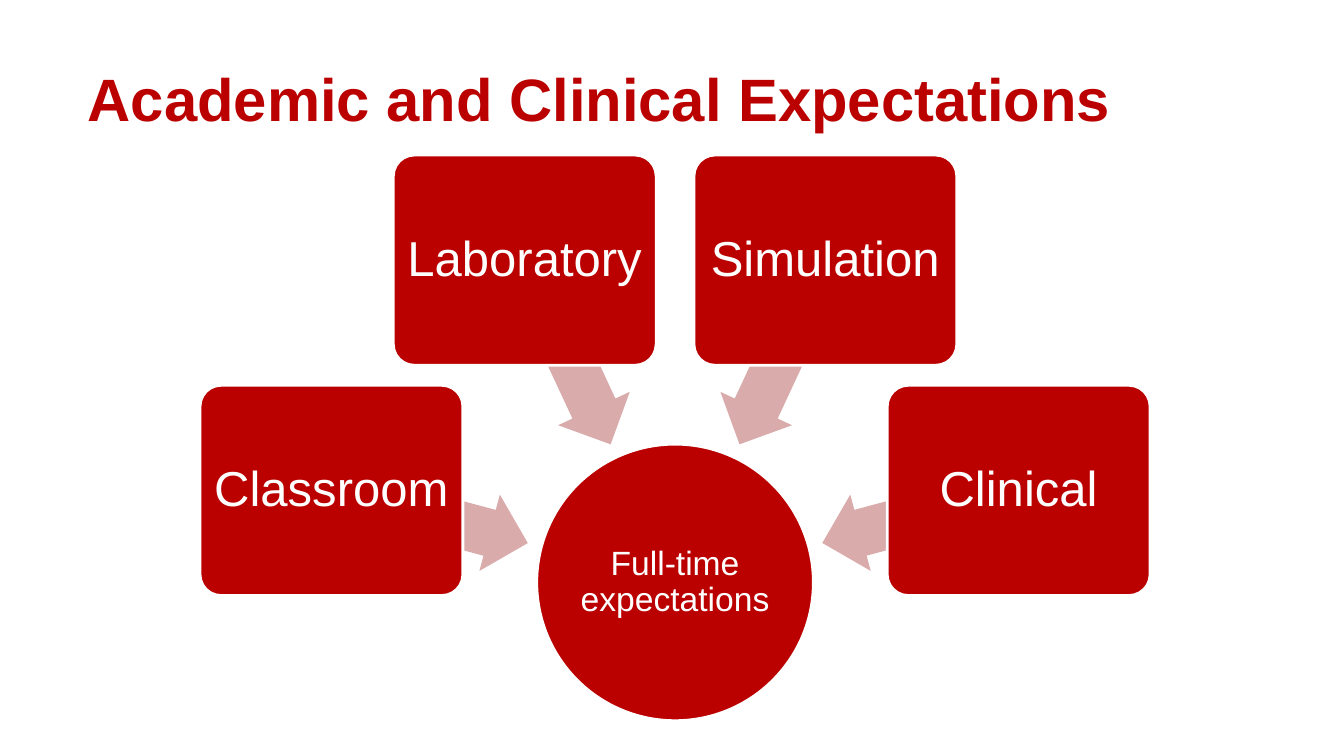
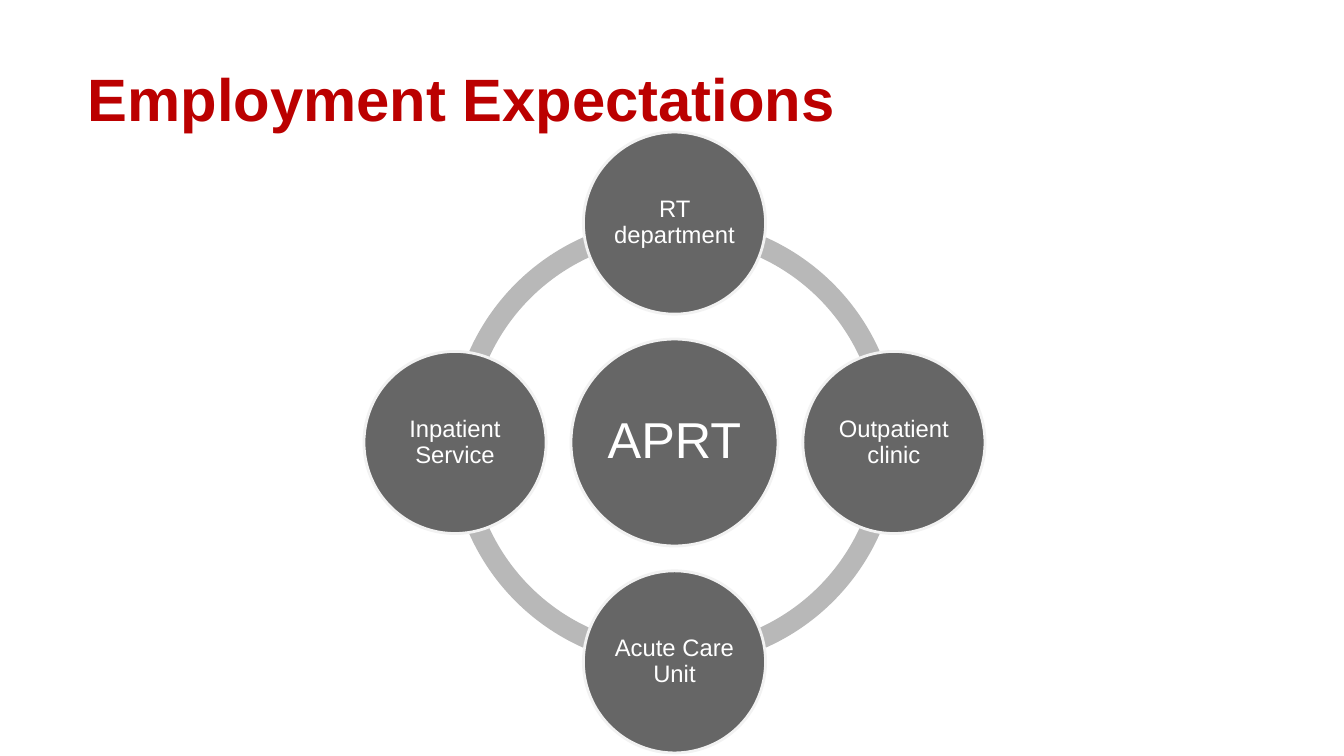
import math

import pptx
import pptx.dml.color
import pptx.enum.shapes
import pptx.enum.text
import pptx.util

SLIDE_WIDTH, SLIDE_HEIGHT = 13.33, 7.5
COLUMN, ROW = SLIDE_WIDTH / 100, SLIDE_HEIGHT / 100
RED, PINK = "BB0000", "DAABAB"
DARK_GRAY, MID_GRAY, PALE_GRAY = "666666", "B8B8B8", "F2F2F2"
WHITE = "FFFFFF"
FONT = "Arial"
SHAPE = pptx.enum.shapes.MSO_SHAPE
ALIGN = pptx.enum.text.PP_ALIGN


def color_of(hex_text):
    """Turn a hex string into a colour."""
    return pptx.dml.color.RGBColor.from_string(hex_text)


def grid_box(column, row, columns, rows):
    """Return left, top, width and height in inches for a place on the 100 by 100 grid."""
    return column * COLUMN, row * ROW, columns * COLUMN, rows * ROW


def orbit_point(center, radius, angle):
    """Return the point at a clockwise angle in degrees around a center."""
    turn = math.radians(angle)
    return center[0] + radius * math.cos(turn), center[1] + radius * math.sin(turn)


def write_text(shape, text, size, color=WHITE, bold=False, align=ALIGN.CENTER,
               inset=(0.02, 0.02), spacing=0.9, wrap=True):
    """Write one formatted paragraph into a shape."""
    frame = shape.text_frame
    frame.auto_size = pptx.enum.text.MSO_AUTO_SIZE.NONE
    frame.word_wrap = wrap
    frame.vertical_anchor = pptx.enum.text.MSO_ANCHOR.MIDDLE
    frame.margin_left = frame.margin_right = pptx.util.Inches(inset[0])
    frame.margin_top = frame.margin_bottom = pptx.util.Inches(inset[1])
    para = frame.paragraphs[0]
    para.alignment = align
    para.line_spacing = spacing
    span = para.add_run()
    span.text = text
    span.font.name = FONT
    span.font.size = pptx.util.Pt(size)
    span.font.bold = bold
    span.font.color.rgb = color_of(color)


def add_figure(page, kind, center, width, height, fill, outline=None, adjust=(), turn=0):
    """Add a flat preset shape around a center."""
    left, top = center[0] - width / 2, center[1] - height / 2
    shape = page.shapes.add_shape(kind, *map(pptx.util.Inches, (left, top, width, height)))
    shape.shadow.inherit = False
    shape.rotation = turn
    shape.fill.solid()
    shape.fill.fore_color.rgb = color_of(fill)
    if outline:
        shape.line.color.rgb = color_of(outline)
        shape.line.width = pptx.util.Pt(2)
    else:
        shape.line.fill.background()
    for index, value in enumerate(adjust):
        shape.adjustments[index] = value
    return shape


def add_titled_page(deck, title):
    """Add a title-only slide with the shared title style."""
    page = deck.slides.add_slide(deck.slide_layouts[5])
    heading = page.shapes.title
    heading.left, heading.top, heading.width, heading.height = map(
        pptx.util.Inches, grid_box(5.78, 7.47, 88, 10.93))
    write_text(heading, title, 42.7, color=RED, bold=True, align=ALIGN.LEFT,
               inset=(0.1, 0.05), spacing=1)
    return page


def draw_converging(page, box, goal, sources):
    """Draw source boxes on an arc, each with an arrow to a goal circle at the bottom."""
    left, top, width, height = box
    hub = 0.49 * height
    center = left + width / 2, top + height - hub / 2
    circle = add_figure(page, SHAPE.OVAL, center, hub, hub, RED, WHITE)
    write_text(circle, goal, 24)
    for index, label in enumerate(sources):
        angle = 195 + 50 * index
        add_figure(page, SHAPE.LEFT_ARROW, orbit_point(center, 0.45 * height, angle),
                   0.36 * height, 0.14 * height, PINK, adjust=(0.6, 0.5), turn=angle)
        source = add_figure(page, SHAPE.ROUNDED_RECTANGLE,
                            orbit_point(center, 0.63 * height, angle),
                            0.95 * hub, 0.76 * hub, RED, WHITE, adjust=(0.1,))
        write_text(source, label, 35, inset=(0.05, 0.07))


def draw_radial_cycle(page, box, core, members):
    """Draw member circles on a ring of arcs around a core circle."""
    left, top, width, height = box
    center = left + width / 2, top + height / 2
    hub = height / 3
    ring, member_size = 2.17 * hub, 0.88 * hub
    step = 360 / len(members)
    angles = [(270 + step * index) % 360 for index in range(len(members))]
    for angle in angles:
        limits = [0.6 * degrees for degrees in (angle, (angle + step) % 360)]
        add_figure(page, SHAPE.BLOCK_ARC, center, ring, ring, MID_GRAY,
                   adjust=(*limits, 0.046))
    circle = add_figure(page, SHAPE.OVAL, center, hub, hub, DARK_GRAY, PALE_GRAY)
    write_text(circle, core, 36, inset=(0.05, 0.05))
    for angle, label in zip(angles, members):
        point = orbit_point(center, (height - member_size) / 2, angle)
        member = add_figure(page, SHAPE.OVAL, point, member_size, member_size,
                            DARK_GRAY, PALE_GRAY)
        write_text(member, label, 17)


def main():
    """Build the deck and save it."""
    deck = pptx.Presentation()
    deck.slide_width = pptx.util.Inches(SLIDE_WIDTH)
    deck.slide_height = pptx.util.Inches(SLIDE_HEIGHT)

    page = add_titled_page(deck, "Academic and Clinical Expectations")
    draw_converging(page, grid_box(14.93, 20.67, 70.6, 74.67), "Full-time expectations",
                    ["Classroom", "Laboratory", "Simulation", "Clinical"])

    page = add_titled_page(deck, "Employment Expectations")
    draw_radial_cycle(page, grid_box(27.08, 17.47, 46.21, 82.13), "APRT",
                      ["RT department", "Outpatient clinic", "Acute Care Unit",
                       "Inpatient Service"])
    deck.save("out.pptx")


if __name__ == "__main__":
    main()
